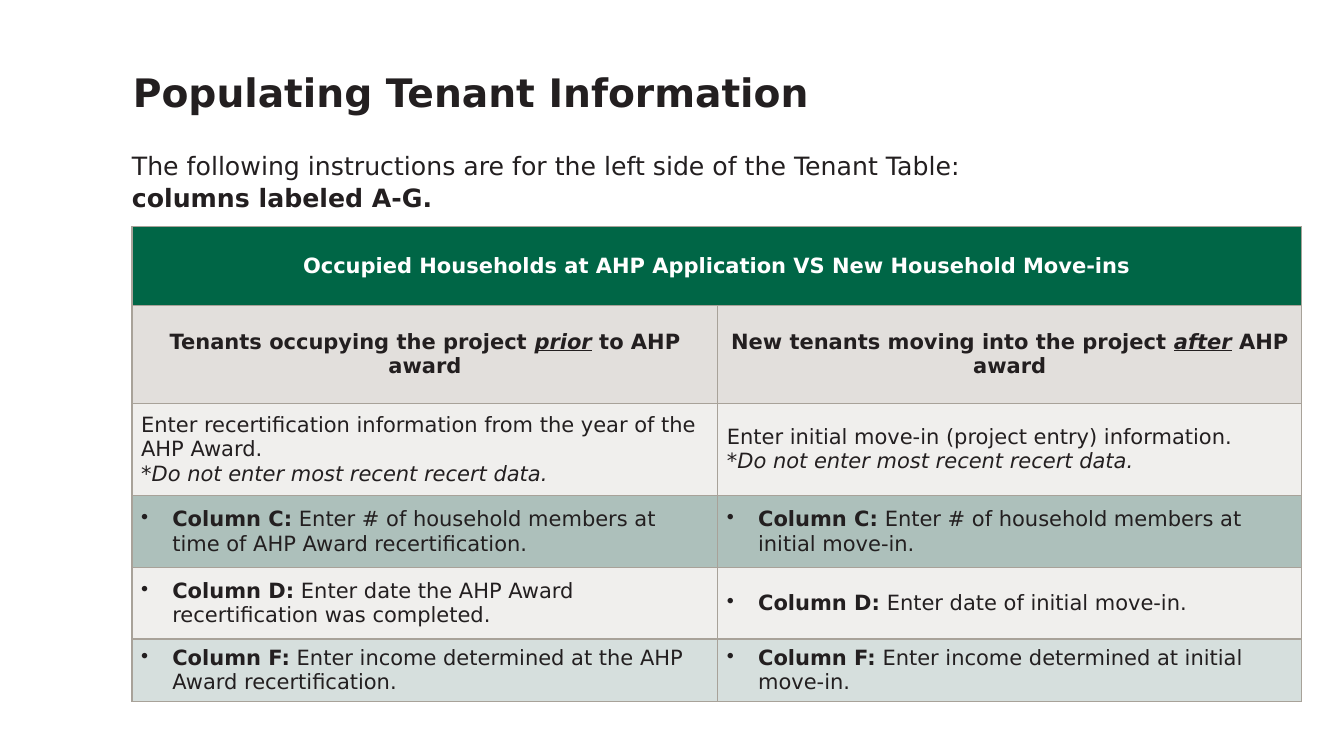
import pptx
import pptx.util
import pptx.dml.color
import pptx.enum.text
import pptx.oxml
import pptx.oxml.ns
from dataclasses import dataclass

TITLE = [[("Populating Tenant Information", "b")]]
INTRO = [[("The following instructions are for the left side of the Tenant Table:\v", ""),
          ("columns labeled A-G.", "b")]]
HEADING = [[("Occupied Households at AHP Application VS New Household Move-ins", "b")]]
RECERT_NOTE = [("*", ""), ("Do not enter most recent recert data.", "i")]
MOVE_IN_NOTE = [("*Do not enter most recent recert data.", "i")]
GROUPS = [
    [[("Tenants occupying the project ", "b"), ("prior", "biu"), (" to AHP award", "b")]],
    [[("New tenants moving into the project ", "b"), ("after", "biu"), (" AHP award", "b")]],
]
SOURCES = [
    [[("Enter recertification information from the year of the AHP Award.", "")], RECERT_NOTE],
    [[("Enter initial move-in (project entry) information.", "")], MOVE_IN_NOTE],
]
STEPS = [
    ("Column C:", "Enter # of household members at time of AHP Award recertification.",
     "Enter # of household members at initial move-in."),
    ("Column D:", "Enter date the AHP Award recertification was completed.",
     "Enter date of initial move-in."),
    ("Column F:", "Enter income determined at the AHP Award recertification.",
     "Enter income determined at initial move-in."),
]


@dataclass(frozen=True)
class Theme:
    font: str = "DejaVu Sans"
    ink: str = "231F20"
    white: str = "FFFFFF"
    green: str = "006646"
    stone: str = "B7B1A9"
    teal: str = "336255"
    border: str = "A8A299"
    title_size: int = 28
    intro_size: int = 18
    table_size: int = 15


THEME = Theme()
WIDTH, HEIGHT = 13.33, 7.5
TABLE_LEFT, TABLE_TOP = 1.31, 2.25
COLUMN_WIDTHS = [5.81, 5.79]
ROW_HEIGHTS = [0.78, 0.97, 0.92, 0.71, 0.71, 0.62]
ROW_FILLS = [(THEME.green, 100), (THEME.stone, 40), (THEME.stone, 20),
             (THEME.teal, 40), (THEME.stone, 20), (THEME.teal, 20)]
BULLET_INDENT = 0.31
INTRO_INDENT = 0.25
inches = pptx.util.Inches
color = pptx.dml.color.RGBColor.from_string
qn = pptx.oxml.ns.qn
MIDDLE = pptx.enum.text.MSO_ANCHOR.MIDDLE
ALIGN = pptx.enum.text.PP_ALIGN


def write(text_frame, paragraphs, size, ink=THEME.ink, align=ALIGN.LEFT, indent=0, bullet=False):
    for index, pieces in enumerate(paragraphs):
        paragraph = text_frame.paragraphs[0] if index == 0 else text_frame.add_paragraph()
        paragraph.alignment = align
        properties = paragraph._p.get_or_add_pPr()
        properties.set("marL", str(inches(indent)))
        properties.set("indent", str(-inches(indent) if bullet else 0))
        if bullet:
            properties.append(properties.makeelement(qn("a:buChar"), {"char": "•"}))
        for text, style in pieces:
            run = paragraph.add_run()
            run.text = text.rstrip("\v")
            if text.endswith("\v"):
                paragraph.add_line_break()
            run.font.name = THEME.font
            run.font.size = pptx.util.Pt(size)
            run.font.color.rgb = color(ink)
            run.font.bold = "b" in style
            run.font.italic = "i" in style
            run.font.underline = "u" in style


def add_text(slide, box, paragraphs, size, indent=0):
    text_frame = slide.shapes.add_textbox(*map(inches, box)).text_frame
    text_frame.word_wrap = True
    write(text_frame, paragraphs, size, indent=indent)
    return text_frame


def style_cell(cell, fill, opacity):
    cell.vertical_anchor = MIDDLE
    cell.margin_left = cell.margin_right = inches(0.09)
    cell.margin_top = cell.margin_bottom = inches(0.05)
    cell.fill.solid()
    cell.fill.fore_color.rgb = color(fill)
    properties = cell._tc.get_or_add_tcPr()
    if opacity < 100:
        shade = properties.find(".//" + qn("a:srgbClr"))
        shade.append(shade.makeelement(qn("a:alpha"), {"val": str(opacity * 1000)}))
    for position, side in enumerate(("lnL", "lnR", "lnT", "lnB")):
        properties.insert(position, pptx.oxml.parse_xml(
            f'<a:{side} {pptx.oxml.ns.nsdecls("a")} w="12700"><a:solidFill>'
            f'<a:srgbClr val="{THEME.border}"/></a:solidFill></a:{side}>'))


def add_tenant_table(slide):
    table = slide.shapes.add_table(
        len(ROW_HEIGHTS), len(COLUMN_WIDTHS), inches(TABLE_LEFT), inches(TABLE_TOP),
        inches(sum(COLUMN_WIDTHS)), inches(sum(ROW_HEIGHTS))).table
    table.first_row = table.horz_banding = False
    for column, width in zip(table.columns, COLUMN_WIDTHS):
        column.width = inches(width)
    for row, height, fill in zip(table.rows, ROW_HEIGHTS, ROW_FILLS):
        row.height = inches(height)
        for cell in row.cells:
            style_cell(cell, *fill)
    table.cell(0, 0).merge(table.cell(0, 1))
    size = THEME.table_size
    write(table.cell(0, 0).text_frame, HEADING, size, THEME.white, ALIGN.CENTER)
    for column in range(len(COLUMN_WIDTHS)):
        write(table.cell(1, column).text_frame, GROUPS[column], size, align=ALIGN.CENTER)
        write(table.cell(2, column).text_frame, SOURCES[column], size)
        for row, (label, *instructions) in enumerate(STEPS, start=3):
            pieces = [(label, "b"), (" " + instructions[column], "")]
            write(table.cell(row, column).text_frame, [pieces], size,
                  indent=BULLET_INDENT, bullet=True)


def main():
    presentation = pptx.Presentation()
    presentation.slide_width, presentation.slide_height = inches(WIDTH), inches(HEIGHT)
    slide = presentation.slides.add_slide(presentation.slide_layouts[6])
    title = add_text(slide, (1.22, 0.59, 11.5, 0.64), TITLE, THEME.title_size)
    title.vertical_anchor = MIDDLE
    intro = add_text(slide, (0.96, 1.43, 11.22, 1.01), INTRO, THEME.intro_size, INTRO_INDENT)
    intro.paragraphs[0].line_spacing = 1.05
    add_tenant_table(slide)
    presentation.save("out.pptx")


if __name__ == "__main__":
    main()
